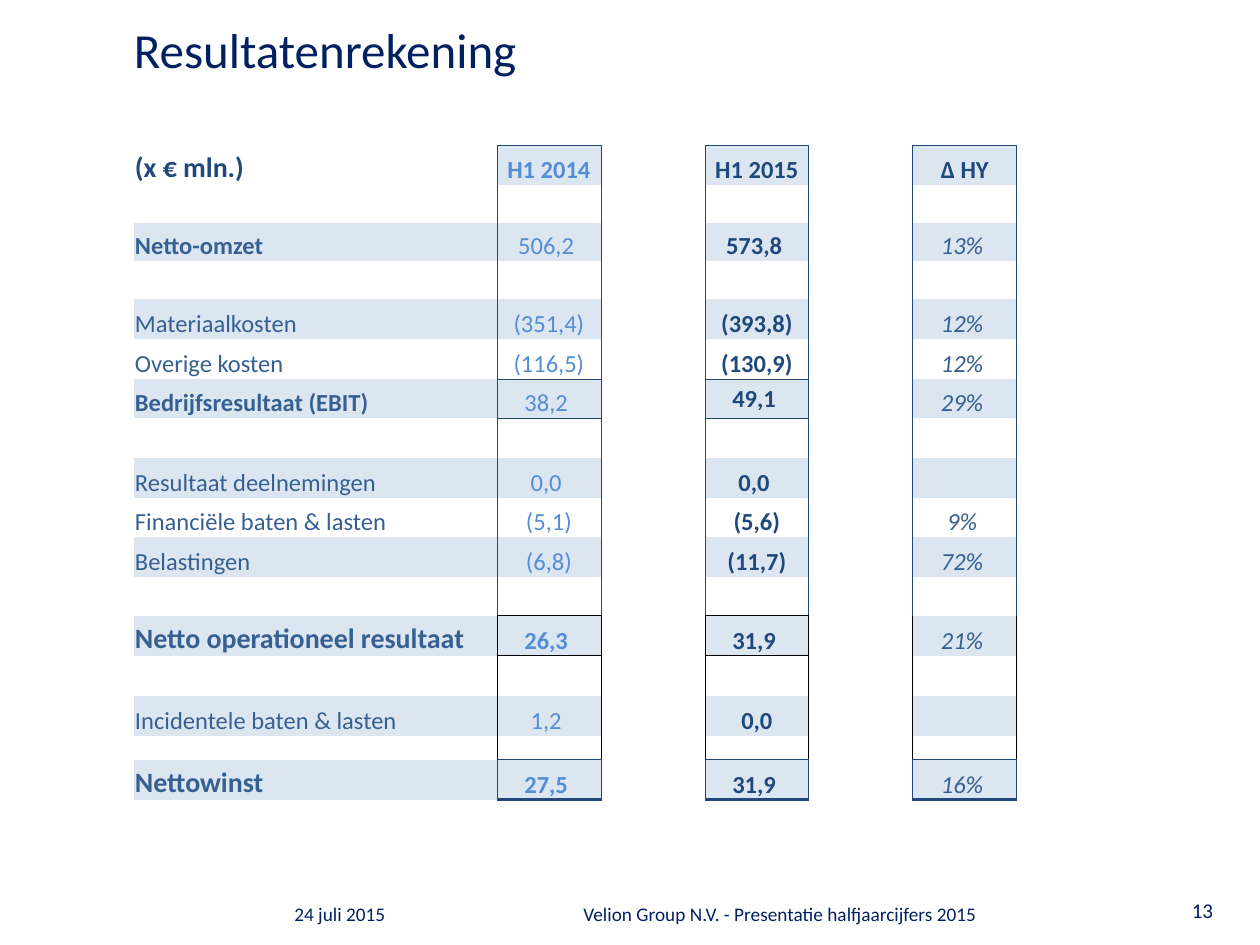
"""Build the income statement slide with its half-year table."""
import pptx
import pptx.util
import pptx.dml.color
import pptx.enum.text
import pptx.oxml.ns
from lxml import etree

PX = 914400 / 126
NAVY, DARK, MID, LIGHT = "002060", "1F497D", "366092", "538DD5"
BAND, WHITE, BLACK = "DCE6F1", "FFFFFF", "000000"
ALIGN = pptx.enum.text.PP_ALIGN
ANCHOR = pptx.enum.text.MSO_ANCHOR

TEXTS = [
    ((134, 26, 496, 118), "Resultatenrekening", {"size": 28, "line": 30, "inset": 0}),
    ((282, 896, 213, 42), "24 juli 2015", {"size": 11}),
    ((571, 896, 576, 42), "Velion Group N.V. - Presentatie halfjaarcijfers 2015", {"size": 11}),
    ((1155, 891, 95, 47), "13", {"size": 12, "align": ALIGN.CENTER}),
]
ROWS = [
    ("(x € mln.)", "H1 2014", "H1 2015", "∆ HY"),
    (),
    ("Netto-omzet", "506,2 ", "573,8 ", "13% "),
    (),
    ("Materiaalkosten", "(351,4)", "(393,8)", "12% "),
    ("Overige kosten", "(116,5)", "(130,9)", "12% "),
    ("Bedrijfsresultaat (EBIT)", "38,2 ", "49,1 ", "29% "),
    (),
    ("Resultaat deelnemingen", "0,0 ", "0,0 ", ""),
    ("Financiële baten & lasten", "(5,1)", "(5,6)", "9% "),
    ("Belastingen", "(6,8)", "(11,7)", "72% "),
    (),
    ("Netto operationeel resultaat", "26,3 ", "31,9 ", "21% "),
    (),
    ("Incidentele baten & lasten", "1,2 ", "0,0", ""),
    (),
    ("Nettowinst", "27,5 ", "31,9 ", "16% "),
]
LEFT, WIDTHS = 134, [363] + [104] * 5
EDGES = [145, 185, 223, 261, 299, 339, 379, 418, 458, 498,
         537, 577, 616, 656, 696, 736, 760, 800]
COLS = (0, 1, 3, 5)
TOTALS, STRONG = (0, 12, 16), (0, 2, 6, 12, 16)
RULES = {
    0: ((1, 3, 5), DARK, 0.5),
    6: ((1, 3), DARK, 0.5),
    7: ((1, 3), DARK, 0.5),
    12: ((1, 3), BLACK, 0.5),
    13: ((1, 3), BLACK, 0.5),
    16: ((1, 3, 5), DARK, 0.5),
    17: ((1, 3, 5), DARK, 2),
}


def px(n):
    return pptx.util.Emu(round(n * PX))


def rgb(code):
    return pptx.dml.color.RGBColor.from_string(code)


def write(frame, text, size=14, color=NAVY, bold=False, italic=False,
          align=ALIGN.LEFT, line=None):
    para = frame.paragraphs[0]
    para.alignment = align
    if line:
        para.line_spacing = pptx.util.Pt(line)
    run = para.add_run()
    run.text = text
    font = run.font
    font.name, font.size = "Calibri", pptx.util.Pt(size)
    font.bold, font.italic = bold, italic
    font.color.rgb = rgb(color)


def label(slide, box, text, inset=None, **style):
    frame = slide.shapes.add_textbox(*map(px, box)).text_frame
    frame.word_wrap = True
    if inset is not None:
        frame.margin_left = frame.margin_right = inset
        frame.margin_top = frame.margin_bottom = inset
    write(frame, text, **style)


def border(cell, side, color, width):
    tag = pptx.oxml.ns.qn
    line = etree.SubElement(cell._tc.get_or_add_tcPr(), tag("a:ln" + side))
    if color is None:
        etree.SubElement(line, tag("a:noFill"))
        return
    line.set("w", str(pptx.util.Pt(width)))
    fill = etree.SubElement(line, tag("a:solidFill"))
    etree.SubElement(fill, tag("a:srgbClr"), val=color)


def rule(edge, col):
    cols, color, width = RULES.get(edge, ((), None, 0))
    return (color, width) if col in cols else (None, 0)


def style(row, col):
    """Return the text format for one table cell."""
    head = row == 0
    if col == 0:
        return {"size": 16 if row in TOTALS else 14, "bold": row in STRONG,
                "color": DARK if head else MID}
    look = {
        1: {"color": LIGHT, "bold": row in TOTALS},
        3: {"color": DARK, "bold": True},
        5: {"color": DARK if head else MID, "bold": head, "italic": not head},
    }[col]
    return {"align": ALIGN.CENTER, **look}


def dress(cell, row, col):
    """Set the borders, fill and margins of one table cell."""
    side = (BLACK if 12 <= row <= 15 else DARK, 0.5)
    border(cell, "L", *(side if col else (None, 0)))
    border(cell, "R", *side)
    border(cell, "T", *rule(row, col))
    border(cell, "B", *rule(row + 1, col))
    band = row % 2 == 0 and col in COLS and (row, col) != (0, 0)
    cell.fill.solid()
    cell.fill.fore_color.rgb = rgb(BAND if band else WHITE)
    cell.margin_left = cell.margin_right = cell.margin_top = px(1)
    cell.margin_bottom = 0
    cell.vertical_anchor = ANCHOR.MIDDLE if (row, col) == (6, 3) else ANCHOR.BOTTOM


def grid(slide):
    heights = [low - top for top, low in zip(EDGES, EDGES[1:])]
    table = slide.shapes.add_table(
        len(heights), len(WIDTHS), px(LEFT), px(EDGES[0]),
        px(sum(WIDTHS)), px(sum(heights))).table
    table.first_row = table.horz_banding = False
    for col, width in zip(table.columns, WIDTHS):
        col.width = px(width)
    for r, height in enumerate(heights):
        table.rows[r].height = px(height)
        texts = dict(zip(COLS, ROWS[r]))
        for c in range(len(WIDTHS)):
            cell = table.cell(r, c)
            dress(cell, r, c)
            if texts.get(c):
                write(cell.text_frame, texts[c], **style(r, c))
            else:
                para = cell.text_frame.paragraphs[0]._p
                etree.SubElement(para, pptx.oxml.ns.qn("a:endParaRPr"), sz="1000")


def main():
    deck = pptx.Presentation()
    deck.slide_width, deck.slide_height = px(1260), px(945)
    slide = deck.slides.add_slide(deck.slide_layouts[6])
    for box, text, look in TEXTS:
        label(slide, box, text, **look)
    grid(slide)
    deck.save("out.pptx")


if __name__ == "__main__":
    main()
